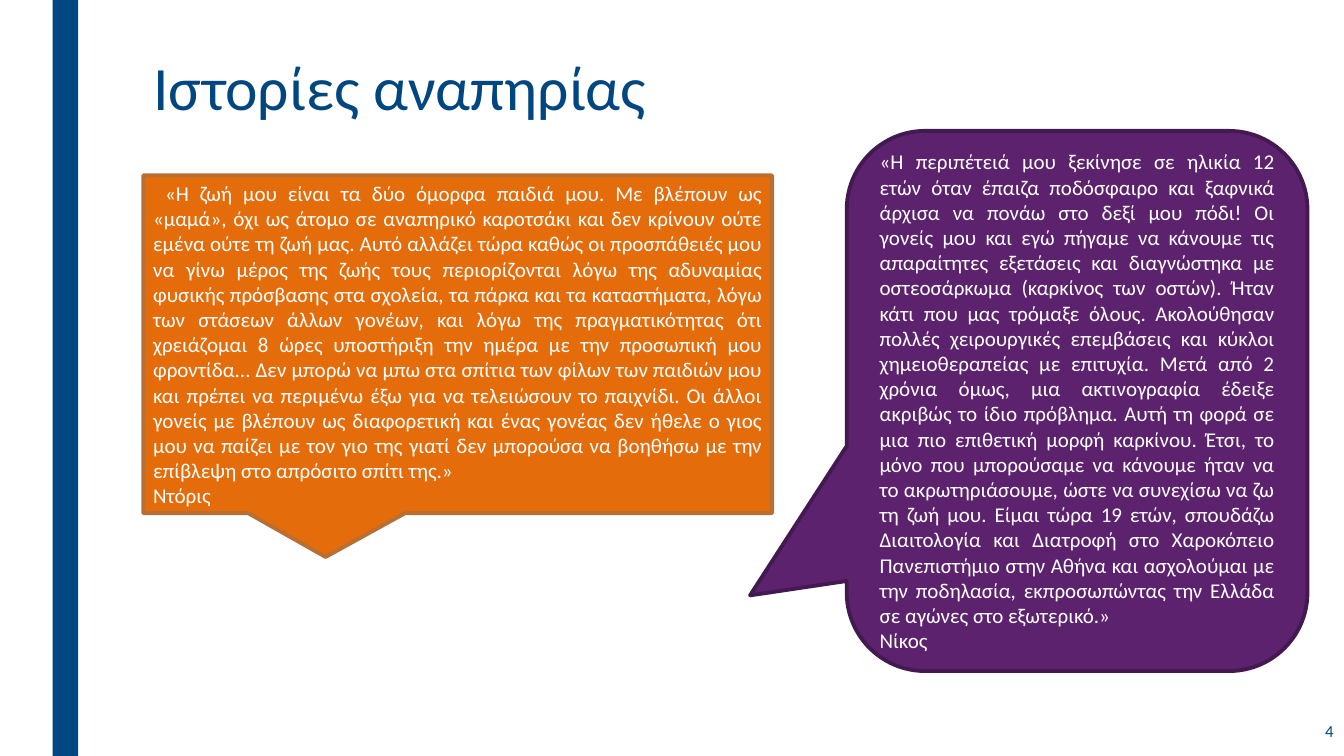
from pptx import Presentation
from pptx.dml.color import RGBColor
from pptx.enum.shapes import MSO_SHAPE
from pptx.enum.text import MSO_ANCHOR, MSO_AUTO_SIZE, PP_ALIGN
from pptx.util import Cm, Pt

# Content
TITLE = "Ιστορίες αναπηρίας"
PAGE = "4"
DORIS = (
    "«Η ζωή μου είναι τα δύο όμορφα παιδιά μου. Με βλέπουν ως «μαμά», όχι ως άτομο "
    "σε αναπηρικό καροτσάκι και δεν κρίνουν ούτε εμένα ούτε τη ζωή μας. Αυτό αλλάζει "
    "τώρα καθώς οι προσπάθειές μου να γίνω μέρος της ζωής τους περιορίζονται λόγω της "
    "αδυναμίας φυσικής πρόσβασης στα σχολεία, τα πάρκα και τα καταστήματα, λόγω των "
    "στάσεων άλλων γονέων, και λόγω της πραγματικότητας ότι χρειάζομαι 8 ώρες "
    "υποστήριξη την ημέρα με την προσωπική μου φροντίδα... Δεν μπορώ να μπω στα σπίτια "
    "των φίλων των παιδιών μου και πρέπει να περιμένω έξω για να τελειώσουν το παιχνίδι. "
    "Οι άλλοι γονείς με βλέπουν ως διαφορετική και ένας γονέας δεν ήθελε ο γιος μου να "
    "παίζει με τον γιο της γιατί δεν μπορούσα να βοηθήσω με την επίβλεψη στο απρόσιτο "
    "σπίτι της.»",
    "Ντόρις",
)
NIKOS = (
    "«Η περιπέτειά μου ξεκίνησε σε ηλικία 12 ετών όταν έπαιζα ποδόσφαιρο και ξαφνικά "
    "άρχισα να πονάω στο δεξί μου πόδι! Οι γονείς μου και εγώ πήγαμε να κάνουμε τις "
    "απαραίτητες εξετάσεις και διαγνώστηκα με οστεοσάρκωμα (καρκίνος των οστών). Ήταν "
    "κάτι που μας τρόμαξε όλους. Ακολούθησαν πολλές χειρουργικές επεμβάσεις και κύκλοι "
    "χημειοθεραπείας με επιτυχία. Μετά από 2 χρόνια όμως, μια ακτινογραφία έδειξε ακριβώς "
    "το ίδιο πρόβλημα. Αυτή τη φορά σε μια πιο επιθετική μορφή καρκίνου. Έτσι, το μόνο που "
    "μπορούσαμε να κάνουμε ήταν να το ακρωτηριάσουμε, ώστε να συνεχίσω να ζω τη ζωή μου. "
    "Είμαι τώρα 19 ετών, σπουδάζω Διαιτολογία και Διατροφή στο Χαροκόπειο Πανεπιστήμιο "
    "στην Αθήνα και ασχολούμαι με την ποδηλασία, εκπροσωπώντας την Ελλάδα σε αγώνες στο "
    "εξωτερικό.»",
    "Νίκος",
)
COLORS = {
    "blue": "004680", "white": "FFFFFF",
    "orange": "E46C0A", "rust": "B76F34",
    "purple": "5C226E", "plum": "441951",
}
# Shape, place in cm, adjustments, fill, line, first-line indent in cm, text
STORIES = [
    (MSO_SHAPE.RECTANGULAR_CALLOUT, (3.61, 4.42, 15.85, 8.51),
     (-0.21, 0.63), "orange", "rust", 0.3, DORIS),
    (MSO_SHAPE.ROUNDED_RECTANGULAR_CALLOUT, (21.34, 3.3, 11.61, 13.61),
     (-0.71, 0.36, 0.17), "purple", "plum", 0, NIKOS),
]


def color(name):
    return RGBColor.from_string(COLORS[name])


def place(box):
    return [Cm(n) for n in box]


def write(para, text, size, tint, align):
    para.alignment = align
    run = para.add_run()
    run.text = text
    run.font.name = "Calibri"
    run.font.size = Pt(size)
    run.font.color.rgb = color(tint)


def draw(kind, box, fill):
    shape = slide.shapes.add_shape(kind, *place(box))
    shape.shadow.inherit = False
    shape.fill.solid()
    shape.fill.fore_color.rgb = color(fill)
    return shape


deck = Presentation()
deck.slide_width, deck.slide_height = Cm(33.87), Cm(19.05)
slide = deck.slides.add_slide(deck.slide_layouts[5])

# Side bar
bar = draw(MSO_SHAPE.RECTANGLE, (1.33, 0, 0.64, 19.05), "blue")
bar.line.fill.background()

# Title
title = slide.shapes.title
title.left, title.top, title.width, title.height = place((3.61, 1.32, 26.67, 2.84))
frame = title.text_frame
frame.auto_size = MSO_AUTO_SIZE.NONE
frame.vertical_anchor = MSO_ANCHOR.TOP
frame.paragraphs[0].line_spacing = 0.89
write(frame.paragraphs[0], TITLE, 44, "blue", PP_ALIGN.LEFT)

# Story callouts
for kind, box, adjust, fill, line, indent, story in STORIES:
    shape = draw(kind, box, fill)
    for i, value in enumerate(adjust):
        shape.adjustments[i] = value
    shape.line.color.rgb = color(line)
    shape.line.width = Pt(2.75)
    frame = shape.text_frame
    frame.word_wrap = True
    frame.vertical_anchor = MSO_ANCHOR.MIDDLE
    for i, text in enumerate(story):
        para = frame.add_paragraph() if i else frame.paragraphs[0]
        write(para, text, 15, "white", PP_ALIGN.JUSTIFY)
    first = frame.paragraphs[0]._p.get_or_add_pPr()
    first.set("indent", str(Cm(indent)))

# Page number
number = slide.shapes.add_textbox(*place((29.41, 17.86, 4.45, 1.12)))
frame = number.text_frame
frame.word_wrap = True
frame.vertical_anchor = MSO_ANCHOR.MIDDLE
write(frame.paragraphs[0], PAGE, 12, "blue", PP_ALIGN.RIGHT)

deck.save("out.pptx")
